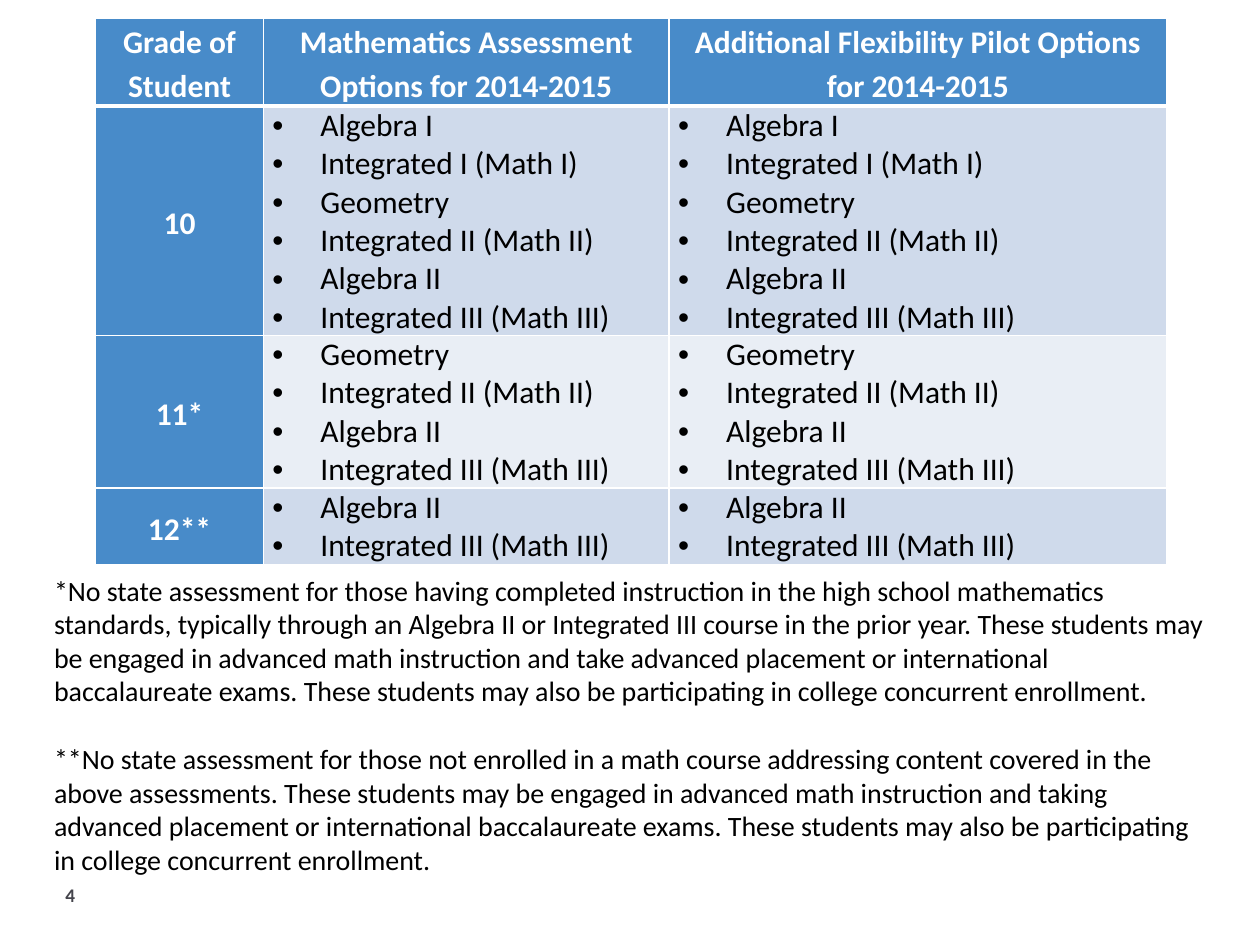
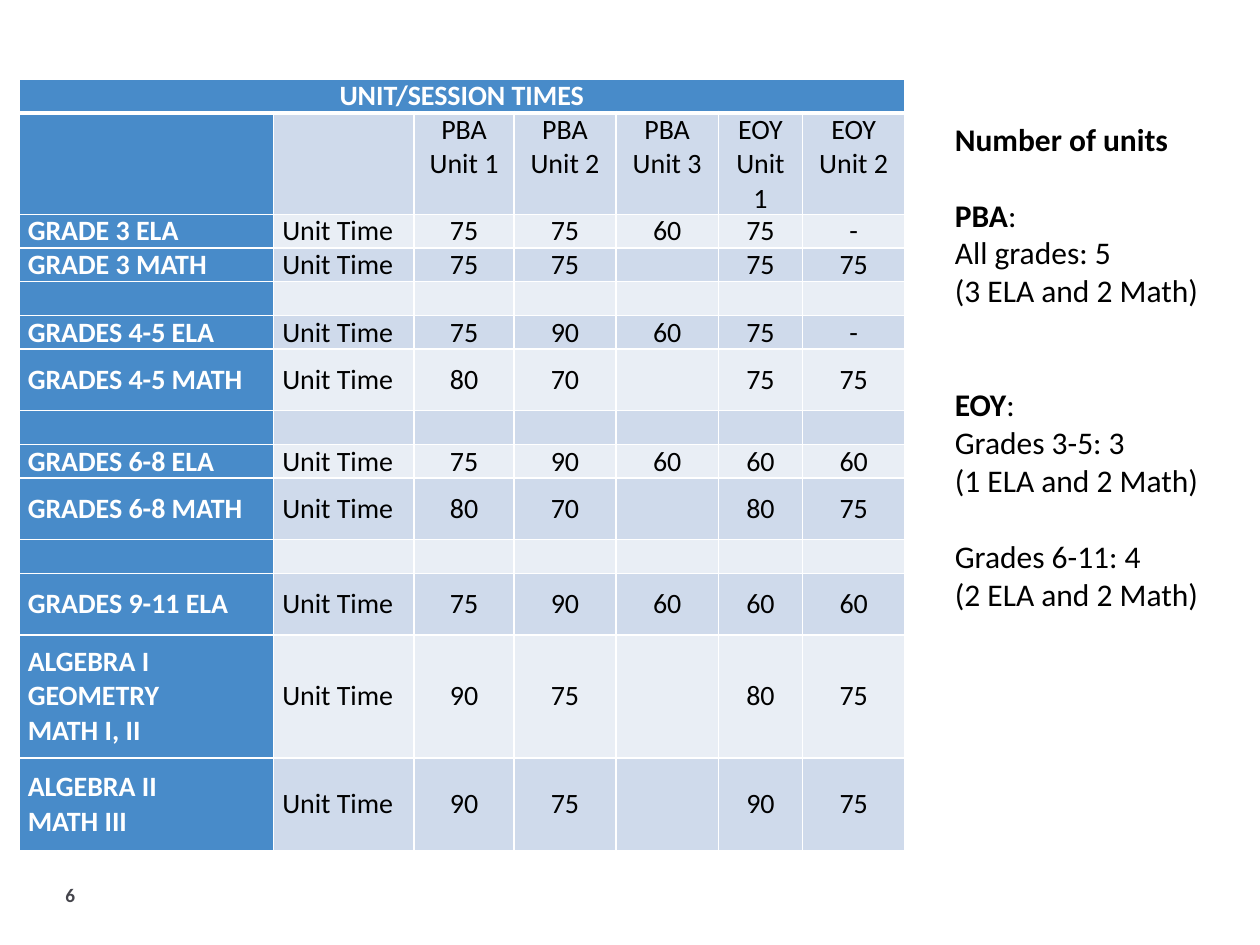
from pptx import Presentation
from pptx.dml.color import RGBColor
from pptx.enum.text import MSO_ANCHOR, PP_ALIGN
from pptx.oxml.ns import qn
from pptx.util import Cm, Pt
from lxml.etree import SubElement

FONT = "Calibri"
BLUE, WHITE, BLACK, GREY = "488BC9", "FFFFFF", "000000", "45454C"
BANDS = ["CFDAEB", "E9EEF5"]

GRADE_HEADINGS = [
    "Grade of Student",
    "Mathematics Assessment Options for 2014-2015",
    "Additional Flexibility Pilot Options for 2014-2015",
]
COURSES = [
    "Algebra I", "Integrated I (Math I)", "Geometry",
    "Integrated II (Math II)", "Algebra II", "Integrated III (Math III)",
]
FIRST_COURSE = {"10": 0, "11*": 2, "12**": 4}
GRADE_COLUMNS = [3.38, 8.18, 10.03]
GRADE_HEADING_HEIGHT, COURSE_HEIGHT = 1.78, 0.77

FOOTNOTES = [
    "*No state assessment for those having completed instruction in the high "
    "school mathematics standards, typically through an Algebra II or Integrated "
    "III course in the prior year. These students may be engaged in advanced math "
    "instruction and take advanced placement or international baccalaureate exams. "
    "These students may also be participating in college concurrent enrollment.",
    "**No state assessment for those not enrolled in a math course addressing "
    "content covered in the above assessments. These students may be engaged in "
    "advanced math instruction and taking advanced placement or international "
    "baccalaureate exams. These students may also be participating in college "
    "concurrent enrollment.",
]

TIMES_TITLE = "UNIT/SESSION TIMES"
UNITS = ["PBA Unit 1", "PBA Unit 2", "PBA Unit 3", "EOY Unit 1", "EOY Unit 2"]
# (test, minutes per unit, row height); an empty test is a spacer row
LOW, TALL = 0.68, 1.24
TIMES = [
    ("GRADE 3 ELA", [75, 75, 60, 75, "-"], LOW),
    ("GRADE 3 MATH", [75, 75, "", 75, 75], LOW),
    ("", [""] * 5, LOW),
    ("GRADES 4-5 ELA", [75, 90, 60, 75, "-"], LOW),
    ("GRADES 4-5 MATH", [80, 70, "", 75, 75], TALL),
    ("", [""] * 5, LOW),
    ("GRADES 6-8 ELA", [75, 90, 60, 60, 60], LOW),
    ("GRADES 6-8 MATH", [80, 70, "", 80, 75], TALL),
    ("", [""] * 5, LOW),
    ("GRADES 9-11 ELA", [75, 90, 60, 60, 60], TALL),
    ("ALGEBRA I\nGEOMETRY\nMATH I, II", [90, 75, "", 80, 75], 2.48),
    ("ALGEBRA II\nMATH III", [90, 75, "", 90, 75], 1.87),
]
TIMES_COLUMNS = [5.13, 2.84, 2.01, 2.06, 2.06, 1.7, 2.06]
TIMES_TITLE_HEIGHT, UNITS_HEIGHT = 0.69, 2.04

# (bold part, plain part, blank lines above)
UNIT_COUNTS = [
    ("Number of units", "", 0),
    ("PBA", ":", 1),
    ("", "All grades: 5", 0),
    ("", "(3 ELA and 2 Math)", 0),
    ("EOY", ":", 2),
    ("", "Grades 3-5: 3", 0),
    ("", "(1 ELA and 2 Math)", 0),
    ("", "Grades 6-11: 4", 1),
    ("", "(2 ELA and 2 Math)", 0),
]


def rgb(color):
    return RGBColor.from_string(color)


def style(run, size, color=BLACK, bold=False):
    run.font.name, run.font.size, run.font.bold = FONT, Pt(size), bold
    run.font.color.rgb = rgb(color)


def add_text_frame(slide, left, top, width, height):
    frame = slide.shapes.add_textbox(Cm(left), Cm(top), Cm(width), Cm(height)).text_frame
    frame.word_wrap = True
    return frame


def add_page_number(slide, number):
    frame = add_text_frame(slide, 1.07, 17.65, 9.32, 0.76)
    frame.vertical_anchor = MSO_ANCHOR.MIDDLE
    frame.text = number
    style(frame.paragraphs[0].runs[0], 11, GREY, True)


def add_bullet(paragraph):
    properties = paragraph._p.get_or_add_pPr()
    properties.set("marL", str(Cm(0.97)))
    properties.set("indent", str(-Cm(0.97)))
    SubElement(properties, qn("a:buFont"), typeface="Arial")
    SubElement(properties, qn("a:buChar"), char="•")


def add_borders(cell, top, bottom):
    """White rules on all four sides, with the top and bottom widths in points."""
    properties = cell._tc.get_or_add_tcPr()
    for side, width in (("L", 1), ("R", 1), ("T", top), ("B", bottom)):
        rule = SubElement(properties, qn(f"a:ln{side}"), w=str(Pt(width)))
        SubElement(SubElement(rule, qn("a:solidFill")), qn("a:srgbClr"), val=WHITE)


def fill_cell(cell, text, size, color, label, align, anchor, spacing, bullets):
    cell.fill.solid()
    cell.fill.fore_color.rgb = rgb(color)
    cell.margin_left = cell.margin_right = Cm(0.18)
    cell.margin_top = cell.margin_bottom = 0
    cell.vertical_anchor = anchor
    cell.text_frame.text = str(text)
    for paragraph in cell.text_frame.paragraphs:
        if bullets:
            add_bullet(paragraph)
        paragraph.alignment = align
        if spacing:
            paragraph.line_spacing = spacing
        for run in paragraph.runs:
            style(run, size, WHITE if label else BLACK, label)
        if not paragraph.runs:
            SubElement(paragraph._p, qn("a:endParaRPr"), sz=str(size * 100))


def add_banded_table(slide, left, top, widths, heights, rows, size, layout):
    """Blue first row and column; layout(row, column) gives align, anchor, spacing, bullets."""
    table = slide.shapes.add_table(
        len(rows), len(widths), Cm(left), Cm(top), Cm(sum(widths)), Cm(sum(heights))).table
    for column, width in zip(table.columns, widths):
        column.width = Cm(width)
    for r, (texts, height) in enumerate(zip(rows, heights)):
        table.rows[r].height = Cm(height)
        for c, text in enumerate(texts):
            cell, label = table.cell(r, c), r == 0 or c == 0
            add_borders(cell, 3 if r == 1 else 1, 3 if r == 0 else 1)
            color = BLUE if label else BANDS[(r - 1) % 2]
            fill_cell(cell, text, size, color, label, *layout(r, c))
    return table


def grade_layout(row, column):
    if row and column:
        return PP_ALIGN.LEFT, MSO_ANCHOR.TOP, None, True
    return PP_ALIGN.CENTER, MSO_ANCHOR.MIDDLE if row else MSO_ANCHOR.TOP, 1.15, False


def times_layout(row, column):
    align = PP_ALIGN.CENTER if row == 0 or column > 1 else PP_ALIGN.LEFT
    return align, MSO_ANCHOR.MIDDLE if row > 1 else MSO_ANCHOR.TOP, None, False


def build_grade_options(slide):
    add_page_number(slide, "4")
    rows, heights = [GRADE_HEADINGS], [GRADE_HEADING_HEIGHT]
    for grade, first in FIRST_COURSE.items():
        courses = COURSES[first:]
        rows.append([grade] + ["\n".join(courses)] * 2)
        heights.append(len(courses) * COURSE_HEIGHT)
    add_banded_table(slide, 1.93, 0.36, GRADE_COLUMNS, heights, rows, 18, grade_layout)
    frame = add_text_frame(slide, 0.84, 11.43, 23.77, 6.4)
    frame.text = "\n".join(FOOTNOTES)
    for paragraph in frame.paragraphs:
        style(paragraph.runs[0], 16)
    frame.paragraphs[1].space_before = Pt(19.5)


def build_unit_times(slide):
    add_page_number(slide, "6")
    rows = [[TIMES_TITLE] + [""] * 6, ["", ""] + UNITS]
    rows += [[test, "Unit Time" if test else ""] + minutes for test, minutes, _ in TIMES]
    heights = [TIMES_TITLE_HEIGHT, UNITS_HEIGHT] + [height for *_, height in TIMES]
    table = add_banded_table(slide, 0.38, 1.59, TIMES_COLUMNS, heights, rows, 16, times_layout)
    table.cell(0, 0).merge(table.cell(0, 6))

    frame = add_text_frame(slide, 19, 2.29, 5.66, 11.02)
    for i, (bold, plain, blank_lines) in enumerate(UNIT_COUNTS):
        paragraph = frame.add_paragraph() if i else frame.paragraphs[0]
        if blank_lines:
            paragraph.space_before = Pt(21.8 * blank_lines)
        for text, is_bold in ((bold, True), (plain, False)):
            if text:
                run = paragraph.add_run()
                run.text = text
                style(run, 18, bold=is_bold)


def main():
    deck = Presentation()
    deck.slide_width, deck.slide_height = Cm(25.4), Cm(19.05)
    for build in (build_grade_options, build_unit_times):
        build(deck.slides.add_slide(deck.slide_layouts[6]))
    deck.save("out.pptx")


if __name__ == "__main__":
    main()
